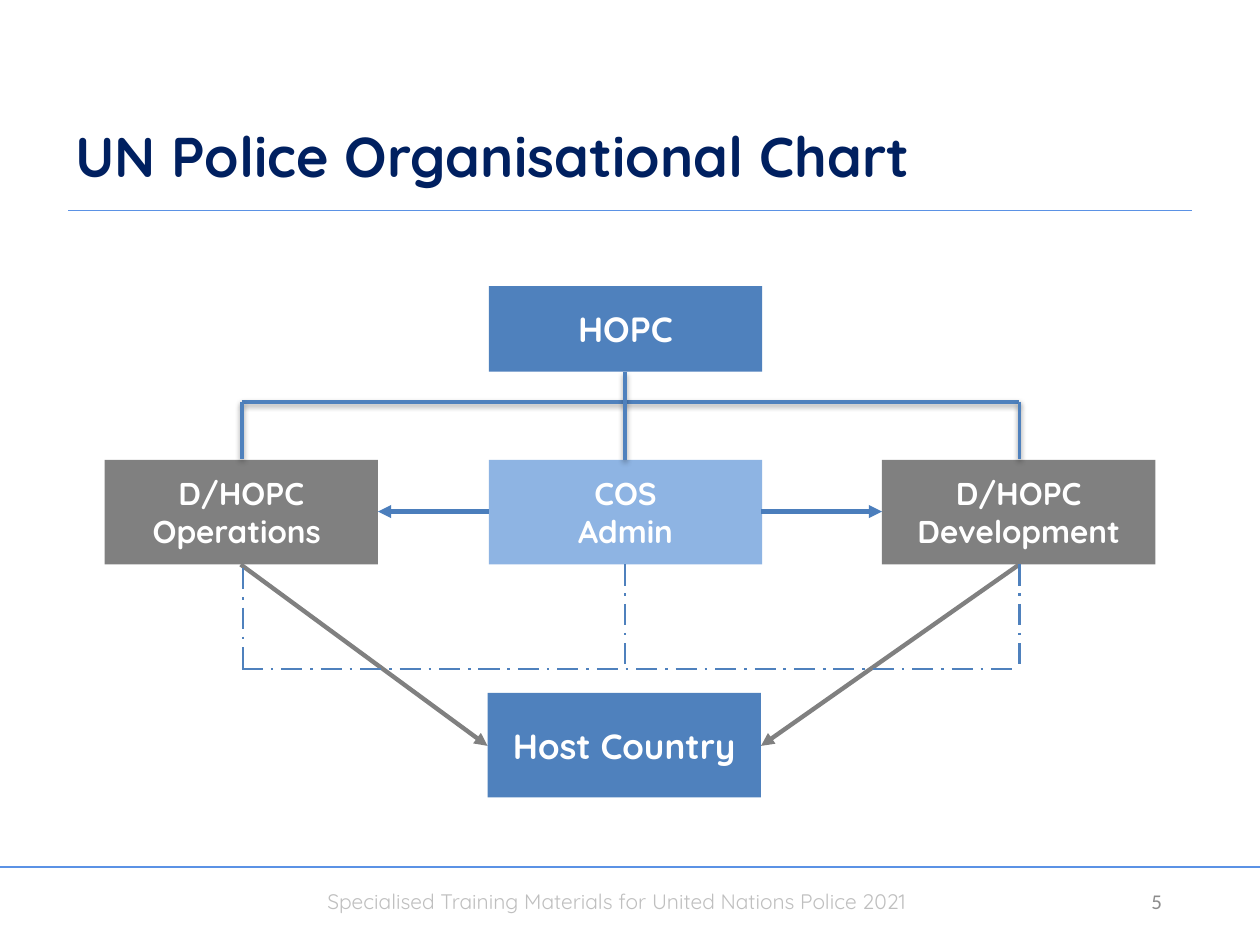
from lxml.etree import SubElement
from pptx import Presentation
from pptx.dml.color import RGBColor
from pptx.enum.dml import MSO_LINE_DASH_STYLE as Dash
from pptx.enum.shapes import MSO_CONNECTOR as Connector, MSO_SHAPE as Shape
from pptx.enum.text import MSO_ANCHOR as Anchor, PP_ALIGN as Align
from pptx.oxml.ns import qn
from pptx.util import Pt

PX = 9144  # 100 px to the inch
BLUE, LIGHT_BLUE, ARROW_BLUE = "4F81BD", "8EB4E3", "4B7EBC"
GREY, RULE_BLUE = "808080", "5B92E5"

presentation = Presentation()
presentation.slide_width, presentation.slide_height = 1000 * PX, 750 * PX
slide = presentation.slides.add_slide(presentation.slide_layouts[6])


def write(shape, text, size, color, bold=False, font="Quicksand",
          align=Align.LEFT, anchor=Anchor.TOP):
    frame = shape.text_frame
    frame.word_wrap = True
    frame.vertical_anchor = anchor
    frame.text = text
    for paragraph in frame.paragraphs:
        paragraph.alignment = align
        paragraph.font.name = font
        paragraph.font.size = Pt(size)
        paragraph.font.bold = bold
        paragraph.font.color.rgb = RGBColor.from_string(color)


def add_line(x1, y1, x2, y2, color, width, dash=None, arrow=False, shadow=False):
    line = slide.shapes.add_connector(
        Connector.STRAIGHT, x1 * PX, y1 * PX, x2 * PX, y2 * PX)
    line.line.color.rgb = RGBColor.from_string(color)
    line.line.width = Pt(width)
    if dash:
        line.line.dash_style = dash
    properties = line._element.spPr
    if arrow:
        SubElement(properties.find(qn("a:ln")), qn("a:tailEnd"), type="triangle")
    effects = SubElement(properties, qn("a:effectLst"))
    if shadow:
        outer = SubElement(effects, qn("a:outerShdw"), blurRad="40000",
                           dist="20000", dir="5400000", rotWithShape="0")
        black = SubElement(outer, qn("a:srgbClr"), val="000000")
        SubElement(black, qn("a:alpha"), val="38000")


# Footer and rules
add_line(0, 688, 1000, 688, RULE_BLUE, 0.75)
add_line(54, 167, 946, 167, RULE_BLUE, 0.75)
footer = slide.shapes.add_textbox(250 * PX, 700 * PX, 500 * PX, 30 * PX)
write(footer, "Specialised Training Materials for United Nations Police 2021", 12, "BFBFBF")
page_number = slide.shapes.add_textbox(860 * PX, 695 * PX, 72 * PX, 40 * PX)
write(page_number, "5", 12, "8C8C8C", font="Calibri", align=Align.RIGHT, anchor=Anchor.MIDDLE)

# Arrows from both deputies to the host country
for x1, x2 in [(191, 387), (809, 604)]:
    add_line(x1, 448, x2, 592, GREY, 2.5, arrow=True)

# Boxes
BOX_WIDTH = 217
for text, left, top, height, fill, size in [
    ("Host Country", 387, 550, 83, BLUE, 20),
    ("HOPC", 388, 227, 68, BLUE, 20),
    ("D/HOPC\nOperations ", 83, 365, 83, GREY, 18),
    ("COS\nAdmin", 388, 365, 83, LIGHT_BLUE, 18),
    ("D/HOPC\nDevelopment", 700, 365, 83, GREY, 18),
]:
    box = slide.shapes.add_shape(
        Shape.RECTANGLE, left * PX, top * PX, BOX_WIDTH * PX, height * PX)
    box.shadow.inherit = False
    box.fill.solid()
    box.fill.fore_color.rgb = RGBColor.from_string(fill)
    box.line.fill.background()
    write(box, text, size, "FFFFFF", bold=True, align=Align.CENTER, anchor=Anchor.MIDDLE)

# Command lines, with a shadow
LEFT, MIDDLE, RIGHT = 192, 496, 809
for ends in [
    (LEFT, 319, RIGHT, 319),
    (MIDDLE, 295, MIDDLE, 365),
    (LEFT, 319, LEFT, 364),
    (RIGHT, 319, RIGHT, 364),
]:
    add_line(*ends, BLUE, 2, shadow=True)

# Coordination lines, dashed
for ends in [
    (LEFT, 531, RIGHT, 531),
    (MIDDLE, 448, MIDDLE, 531),
    (RIGHT, 448, RIGHT, 531),
    (LEFT + 1, 451, LEFT + 1, 534),
]:
    add_line(*ends, BLUE, 1.5, dash=Dash.LONG_DASH_DOT)

# Arrows from the chief of staff to both deputies
for x1, x2 in [(604, 700), (388, 300)]:
    add_line(x1, 406, x2, 406, ARROW_BLUE, 2.5, arrow=True)

title = slide.shapes.add_textbox(50 * PX, 50 * PX, 783 * PX, 105 * PX)
write(title, "UN Police Organisational Chart", 32, "002060", bold=True, anchor=Anchor.BOTTOM)
title.text_frame.paragraphs[0].line_spacing = Pt(34.4)

presentation.save("out.pptx")
